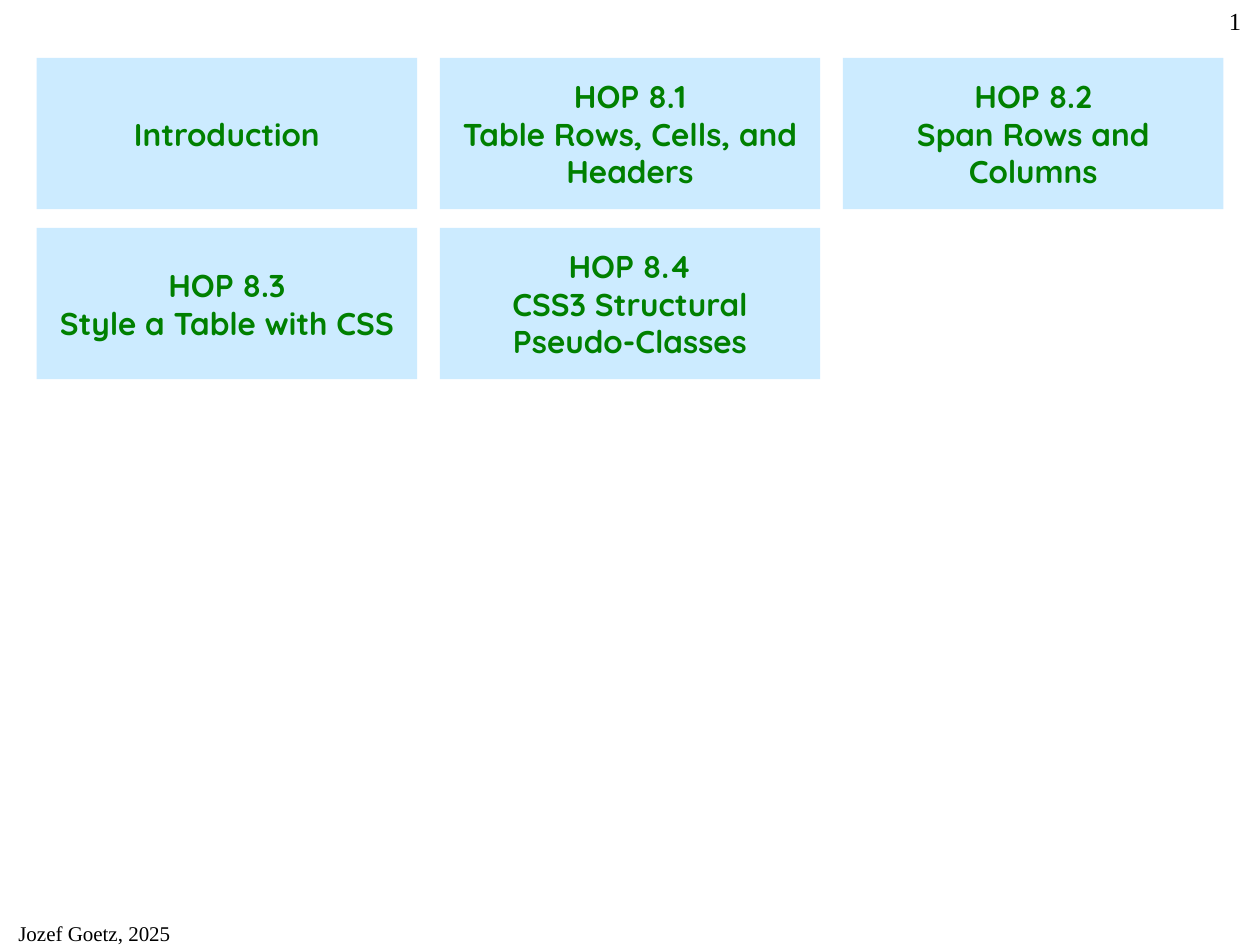
from pptx import Presentation
from pptx.dml.color import RGBColor
from pptx.enum.shapes import MSO_SHAPE
from pptx.enum.text import MSO_ANCHOR, PP_ALIGN
from pptx.util import Inches, Pt

RECTANGLE = MSO_SHAPE.RECTANGLE
MIDDLE, TOP = MSO_ANCHOR.MIDDLE, MSO_ANCHOR.TOP
CENTER, RIGHT = PP_ALIGN.CENTER, PP_ALIGN.RIGHT

COLORS = {"tile": "CCEBFF", "topic": "008000", "note": "000000"}


def write_lines(frame, lines, font, size, color, align, anchor, bold=False):
    frame.word_wrap = True
    frame.vertical_anchor = anchor
    for index, line in enumerate(lines):
        paragraph = frame.paragraphs[0] if index == 0 else frame.add_paragraph()
        paragraph.alignment = align
        run = paragraph.add_run()
        run.text = line
        run.font.name = font
        run.font.size = Pt(size)
        run.font.bold = bold
        run.font.color.rgb = RGBColor.from_string(COLORS[color])


prs = Presentation()
prs.slide_width, prs.slide_height = Inches(10), Inches(7.5)
slide = prs.slides.add_slide(prs.slide_layouts[6])

# Grid of topics, three to a row
topics = [
    ["Introduction"],
    ["HOP 8.1", "Table Rows, Cells, and Headers"],
    ["HOP 8.2", "Span Rows and Columns"],
    ["HOP 8.3", "Style a Table with CSS"],
    ["HOP 8.4", "CSS3 Structural Pseudo-Classes"],
]
COLUMNS = 3
LEFT_EDGE, TOP_EDGE = 0.29, 0.46
TILE_WIDTH, TILE_HEIGHT = 3.02, 1.2
COLUMN_STEP, ROW_STEP = 3.2, 1.35

for index, lines in enumerate(topics):
    row, column = divmod(index, COLUMNS)
    tile = slide.shapes.add_shape(
        RECTANGLE,
        Inches(LEFT_EDGE + column * COLUMN_STEP),
        Inches(TOP_EDGE + row * ROW_STEP),
        Inches(TILE_WIDTH),
        Inches(TILE_HEIGHT),
    )
    tile.shadow.inherit = False
    tile.fill.solid()
    tile.fill.fore_color.rgb = RGBColor.from_string(COLORS["tile"])
    tile.line.fill.background()
    write_lines(tile.text_frame, lines, "Quicksand", 18, "topic", CENTER, MIDDLE, bold=True)

# Page number and author
notes = [
    ("1", 14, RIGHT, (7.92, 0, 2.03, 0.5)),
    ("Jozef Goetz, 2025", 12, CENTER, (0, 7.26, 1.5, 0.24)),
]
for text, size, align, place in notes:
    note = slide.shapes.add_textbox(*(Inches(length) for length in place))
    write_lines(note.text_frame, [text], "Times New Roman", size, "note", align, TOP)

prs.save("out.pptx")
